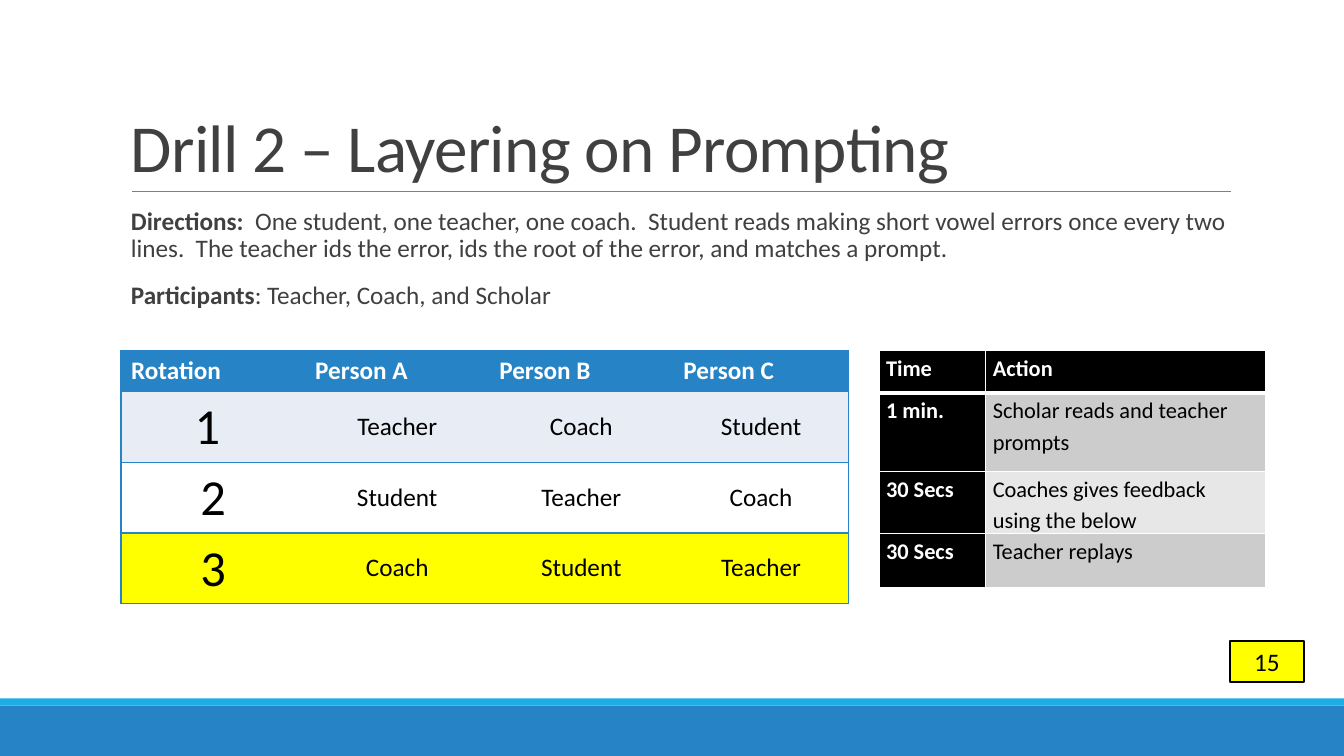
from dataclasses import dataclass

from lxml.etree import SubElement
from pptx import Presentation
from pptx.dml.color import RGBColor as RGB
from pptx.enum.shapes import MSO_CONNECTOR as Line, MSO_SHAPE as Shape
from pptx.enum.text import MSO_ANCHOR as Anchor, PP_ALIGN as Align
from pptx.oxml.ns import qn
from pptx.util import Cm, Pt


@dataclass(frozen=True)
class Theme:
    font: str = "Calibri"
    ink: str = "404040"
    black: str = "000000"
    white: str = "FFFFFF"
    blue: str = "2683C6"
    cyan: str = "1CADE4"
    rule: str = "808080"
    pale: str = "E8EDF5"
    yellow: str = "FFFF00"
    gray: str = "CCCCCC"
    light: str = "E7E7E7"
    title: int = 48
    digit: int = 36
    body: int = 18
    small: int = 16


theme = Theme()


def write(para, text, size, color, bold=False):
    run = para.add_run()
    run.text = text
    style = {"name": theme.font, "size": Pt(size), "bold": bold}
    for key, value in style.items():
        setattr(run.font, key, value)
    run.font.color.rgb = RGB.from_string(color)
    return run


def edge(cell, side, color, width):
    """Draw one cell border, or clear it when color is None."""
    line = SubElement(cell._tc.get_or_add_tcPr(), qn(f"a:ln{side}"), w=str(Pt(width)))
    if color is None:
        SubElement(line, qn("a:noFill"))
    else:
        fill = SubElement(line, qn("a:solidFill"))
        SubElement(fill, qn("a:srgbClr"), val=color)


deck = Presentation()
deck.slide_width, deck.slide_height = Cm(33.87), Cm(19.05)
slide = deck.slides.add_slide(deck.slide_layouts[6])
shapes = slide.shapes

# Footer bands and page number
boxes = [
    (0, 17.78, 33.87, 1.27, theme.blue),
    (0, 17.6, 33.87, 0.18, theme.cyan),
    (30.99, 16.15, 1.88, 1.03, theme.yellow),
]
for left, top, width, height, color in boxes:
    box = shapes.add_shape(Shape.RECTANGLE, Cm(left), Cm(top), Cm(width), Cm(height))
    box.shadow.inherit = False
    box.fill.solid()
    box.fill.fore_color.rgb = RGB.from_string(color)
    box.line.fill.background()
box.line.color.rgb = RGB.from_string(theme.black)
box.line.width = Pt(1.25)
page = box.text_frame
page.vertical_anchor = Anchor.MIDDLE
page.paragraphs[0].alignment = Align.CENTER
write(page.paragraphs[0], "15", theme.body, theme.black)

# Rule under the title
rule = shapes.add_connector(Line.STRAIGHT, Cm(3.33), Cm(4.82), Cm(31.01), Cm(4.82))
rule.line.color.rgb = RGB.from_string(theme.rule)
rule.line.width = Pt(0.5)
SubElement(rule._element.spPr, qn("a:effectLst"))

# Title
head = shapes.add_textbox(Cm(3.05), Cm(0.79), Cm(27.94), Cm(4.04)).text_frame
head.word_wrap = True
head.vertical_anchor = Anchor.BOTTOM
para = head.paragraphs[0]
para.line_spacing = 0.85
run = write(para, "Drill 2 – Layering on Prompting", theme.title, theme.ink)
run._r.get_or_add_rPr().set("spc", "-50")

# Directions and participants
notes = [
    ("Directions:  ", "One student, one teacher, one coach.  Student reads making short "
     "vowel errors once every two lines.  The teacher ids the error, ids the root of "
     "the error, and matches a prompt."),
    ("Participants", ": Teacher, Coach, and Scholar"),
]
body = shapes.add_textbox(Cm(3.05), Cm(5.13), Cm(27.94), Cm(3.35)).text_frame
body.word_wrap = True
body.margin_right = 0
for i, (label, text) in enumerate(notes):
    para = body.add_paragraph() if i else body.paragraphs[0]
    spacing = {"line_spacing": 0.9, "space_before": Pt(12 if i else 0), "space_after": Pt(2)}
    for key, value in spacing.items():
        setattr(para, key, value)
    write(para, label, theme.body, theme.ink, True)
    write(para, text, theme.body, theme.ink)

# Rotation table and timing table
turns = {
    "left": 3.05,
    "cols": [4.64, 4.64, 4.64, 4.42],
    "rows": [1.03, 1.78, 1.78, 1.78],
    "fills": [theme.blue, theme.pale, theme.white, theme.yellow],
    "text": [
        ["Rotation", "Person A", "Person B", "Person C"],
        ["1 ", "Teacher", "Coach", "Student"],
        ["2", "Student", "Teacher", "Coach"],
        ["3", "Coach", "Student", "Teacher"],
    ],
}
times = {
    "left": 22.15,
    "cols": [2.69, 7.06],
    "rows": [1.07, 1.98, 1.54, 1.35],
    "fills": [theme.black, theme.gray, theme.light, theme.gray],
    "text": [
        ["Time", "Action"],
        ["1 min.", "Scholar reads and teacher prompts"],
        ["30 Secs", "Coaches gives feedback using the below"],
        ["30 Secs", "Teacher replays"],
    ],
}
for plan in (turns, times):
    cols, rows = plan["cols"], plan["rows"]
    timed = plan is times
    grid = shapes.add_table(len(rows), len(cols), Cm(plan["left"]), Cm(8.84),
                            Cm(sum(cols)), Cm(sum(rows))).table
    grid.first_row = grid.horz_banding = False
    for col, width in zip(grid.columns, cols):
        col.width = Cm(width)
    for row, height in zip(grid.rows, rows):
        row.height = Cm(height)
    for r, words in enumerate(plan["text"]):
        for c, text in enumerate(words):
            cell = grid.cell(r, c)
            para = cell.text_frame.paragraphs[0]
            fill, size = plan["fills"][r], theme.body
            bold = r == 0
            line = theme.white if timed else theme.blue
            if timed:
                size = theme.small
                para.line_spacing = 1.15
                insets = {"margin_left": 0.18, "margin_right": 0.18,
                          "margin_top": 0, "margin_bottom": 0}
                for key, value in insets.items():
                    setattr(cell, key, Cm(value))
                if c == 0:
                    fill, bold = theme.black, True
            elif r > 0:
                para.alignment = Align.CENTER
                cell.vertical_anchor = Anchor.MIDDLE
                if c == 0:
                    size = theme.digit
            write(para, text, size, theme.white if bold else theme.black, bold)
            # Only the timing table has inner vertical lines
            edge(cell, "L", line if timed or c == 0 else None, 1)
            edge(cell, "R", line if timed or c == len(cols) - 1 else None, 1)
            edge(cell, "T", line, 3 if timed and r == 1 else 1)
            edge(cell, "B", line, 3 if timed and r == 0 else 1)
            cell.fill.solid()
            cell.fill.fore_color.rgb = RGB.from_string(fill)

deck.save("out.pptx")
